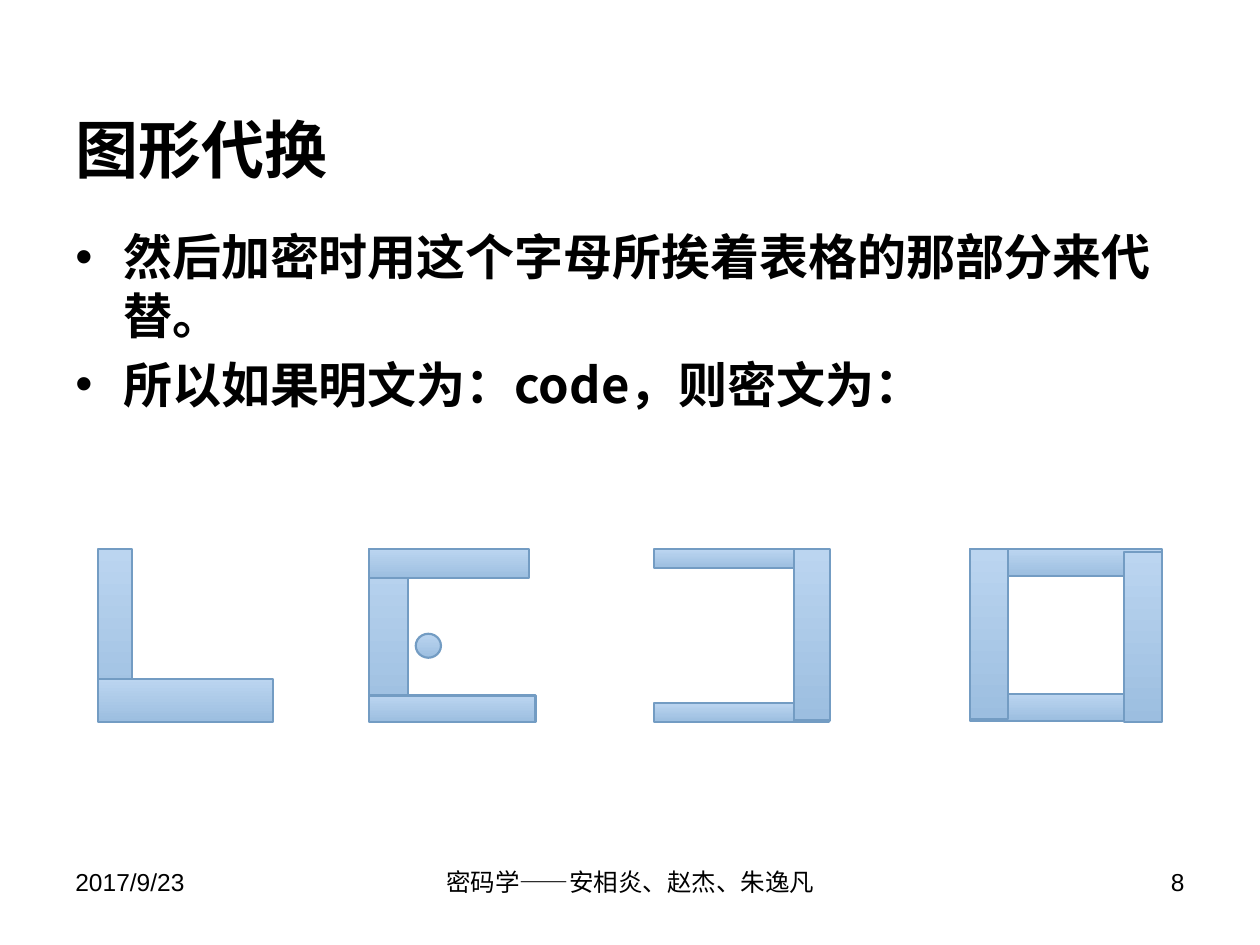
from pptx import Presentation
from pptx.dml.color import RGBColor
from pptx.enum.shapes import MSO_SHAPE
from pptx.enum.text import MSO_ANCHOR, PP_ALIGN
from pptx.oxml.ns import qn
from pptx.util import Inches, Pt

BLACK = RGBColor(0x00, 0x00, 0x00)
LIGHT_BLUE = RGBColor(0xBB, 0xD5, 0xF0)
MID_BLUE = RGBColor(0x9C, 0xBE, 0xE0)
EDGE_BLUE = RGBColor(0x73, 0x9C, 0xC3)
CJK_FONT = "Noto Sans CJK SC"
MARGIN = 0.5
CONTENT_WIDTH = 9
INDENT = Inches(0.38)


def write(paragraph, text, size, face, bold):
    run = paragraph.add_run()
    run.text = text
    run.font.size = Pt(size)
    run.font.bold = bold
    run.font.name = face
    run.font.color.rgb = BLACK
    east_asian = run.font._element.makeelement(qn("a:ea"), {"typeface": CJK_FONT})
    run.font._element.find(qn("a:latin")).addnext(east_asian)


def text_frame_at(left, top, width, height):
    box = slide.shapes.add_textbox(Inches(left), Inches(top), Inches(width), Inches(height))
    box.text_frame.word_wrap = True
    return box.text_frame


prs = Presentation()
prs.slide_width = Inches(10)
prs.slide_height = Inches(7.5)
slide = prs.slides.add_slide(prs.slide_layouts[5])

title = slide.shapes.title
title.left, title.top = Inches(MARGIN), Inches(0.8)
title.width, title.height = Inches(CONTENT_WIDTH), Inches(0.75)
title.text_frame.vertical_anchor = MSO_ANCHOR.MIDDLE
heading = title.text_frame.paragraphs[0]
heading.alignment = PP_ALIGN.LEFT
write(heading, "图形代换", 36, CJK_FONT, True)

body = text_frame_at(MARGIN, 1.75, CONTENT_WIDTH, 4.95)
points = [
    "然后加密时用这个字母所挨着表格的那部分来代替。",
    "所以如果明文为：code，则密文为：",
]
for index, point in enumerate(points):
    paragraph = body.add_paragraph() if index else body.paragraphs[0]
    properties = paragraph._p.get_or_add_pPr()
    properties.set("marL", str(INDENT))
    properties.set("indent", str(-INDENT))
    for tag, attribute, value in [("a:buFont", "typeface", "Arial"), ("a:buChar", "char", "•")]:
        properties.append(properties.makeelement(qn(tag), {attribute: value}))
    paragraph.line_spacing = Pt(33.7)
    if index:
        paragraph.space_before = Pt(5.6)
    write(paragraph, point, 28, CJK_FONT, True)

footers = [
    (MARGIN, 2.33, PP_ALIGN.LEFT, "2017/9/23"),
    (3.42, 3.17, PP_ALIGN.CENTER, "密码学——安相炎、赵杰、朱逸凡"),
    (7.17, 2.33, PP_ALIGN.RIGHT, "8"),
]
for left, width, alignment, text in footers:
    footer = text_frame_at(left, 6.83, width, 0.38).paragraphs[0]
    footer.alignment = alignment
    write(footer, text, 14, "Arial", False)

SYMBOL_TOP = 4.36
BAR, DOT = MSO_SHAPE.RECTANGLE, MSO_SHAPE.OVAL
cipher_symbols = [
    (0.78, [(BAR, 0, 0, 0.27, 1.36), (BAR, 0, 1.03, 1.39, 0.34)]),
    (2.93, [(BAR, 0, 0, 0.31, 1.36), (BAR, 0, 0, 1.27, 0.23),
            (BAR, 0, 1.16, 1.32, 0.21), (DOT, 0.37, 0.67, 0.2, 0.19)]),
    (5.19, [(BAR, 0, 0, 1.39, 0.15), (BAR, 0, 1.22, 1.39, 0.15),
            (BAR, 1.11, 0, 0.29, 1.36)]),
    (7.7, [(BAR, 0, 0, 1.52, 0.21), (BAR, 0, 1.15, 1.52, 0.21),
           (BAR, 0, 0, 0.3, 1.35), (BAR, 1.22, 0.02, 0.3, 1.35)]),
]
for symbol_left, strokes in cipher_symbols:
    symbol = slide.shapes.add_group_shape()
    for kind, across, down, width, height in strokes:
        stroke = symbol.shapes.add_shape(
            kind, Inches(symbol_left + across), Inches(SYMBOL_TOP + down),
            Inches(width), Inches(height))
        stroke.shadow.inherit = False
        stroke.fill.gradient()
        stroke.fill.gradient_angle = 270
        for stop, colour, position in zip(stroke.fill.gradient_stops, (LIGHT_BLUE, MID_BLUE), (0, 1)):
            stop.color.rgb = colour
            stop.position = position
        stroke.line.color.rgb = EDGE_BLUE
        stroke.line.width = Pt(1.25)

prs.save("out.pptx")
